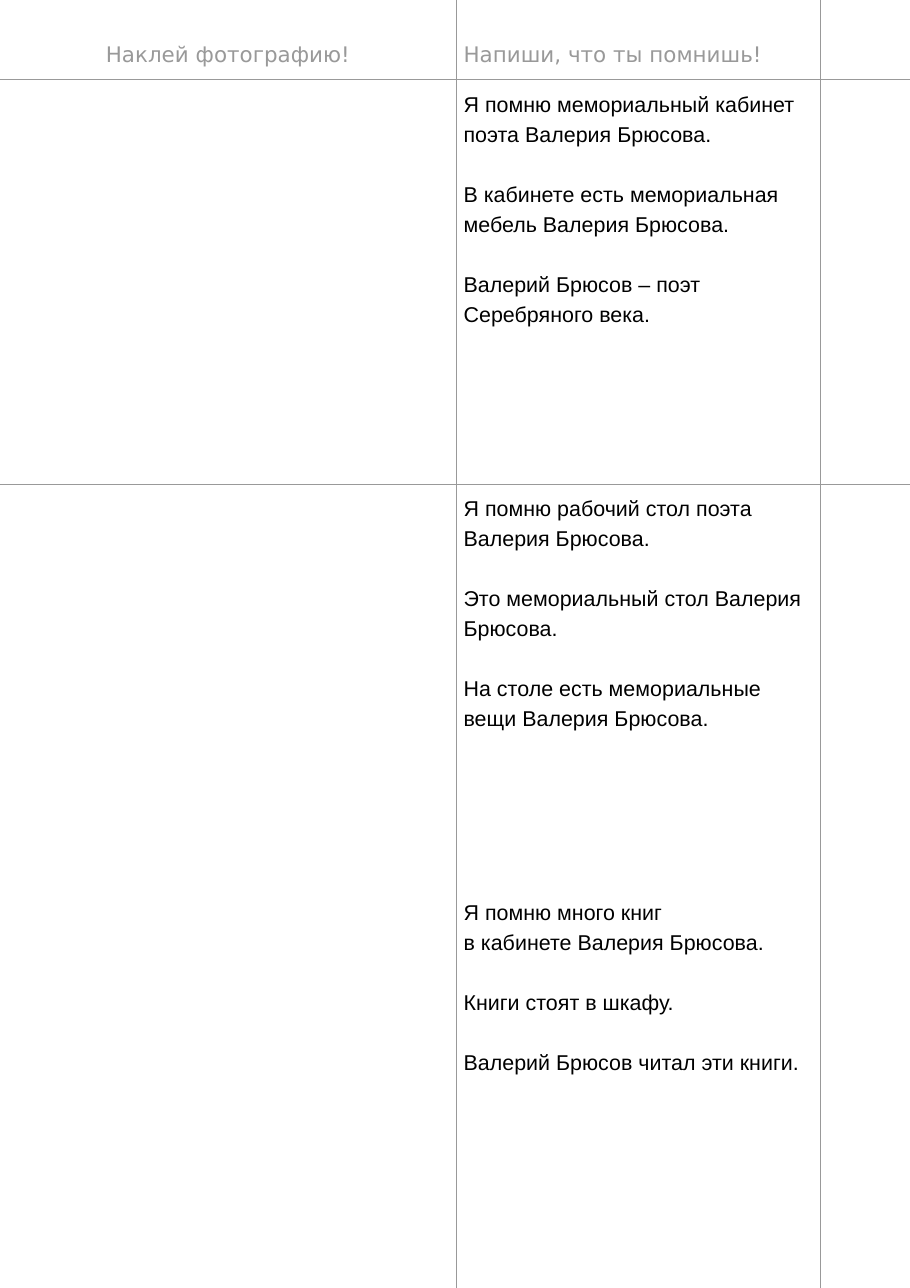
"""Build the memory sheet: a table with room for photos and written memories."""
from dataclasses import dataclass

from lxml.etree import SubElement
from pptx import Presentation
from pptx.dml.color import RGBColor as Rgb
from pptx.enum.text import PP_ALIGN as Align
from pptx.oxml.ns import qn
from pptx.table import _Cell as Cell
from pptx.util import Pt

GREY, WHITE, BLACK = "999999", "FFFFFF", "000000"
LINE = 19.6
INSET = 5
WIDTHS = [298, 238.3, 59]


@dataclass
class Row:
    height: float
    photo: str
    memory: list[str]
    ruled: bool
    head: bool = False


ROWS = [
    Row(51.8, "Наклей фотографию!", ["Напиши, что ты помнишь!"], True, head=True),
    Row(264.5, "", [
        "Я помню мемориальный кабинет поэта Валерия Брюсова.",
        "В кабинете есть мемориальная мебель Валерия Брюсова.",
        "Валерий Брюсов – поэт Серебряного века.",
    ], True),
    Row(263.5, "", [
        "Я помню рабочий стол поэта Валерия Брюсова.",
        "Это мемориальный стол Валерия Брюсова.",
        "На столе есть мемориальные вещи Валерия Брюсова.",
    ], False),
    Row(263.5, "", [
        "Я помню много книг\vв кабинете Валерия Брюсова.",
        "Книги стоят в шкафу.",
        "Валерий Брюсов читал эти книги.",
    ], False),
]


def color(code: str) -> Rgb:
    return Rgb.from_string(code)


def write(cell: Cell, lines: list[str], *, font: str, tint: str,
          align: Align = Align.LEFT, size: float = 14) -> None:
    frame = cell.text_frame
    for i, line in enumerate(lines):
        para = frame.add_paragraph() if i else frame.paragraphs[0]
        para.text = line
        para.alignment = align
        para.line_spacing = Pt(LINE)
        para.space_before = Pt(LINE if i else 0)
        for run in para.runs:
            run.font.name = font
            run.font.size = Pt(size)
            run.font.color.rgb = color(tint)


def border(cell: Cell, sides: dict[str, bool]) -> None:
    props = cell._tc.get_or_add_tcPr()
    for side, shown in sides.items():
        line = SubElement(props, qn(f"a:ln{side}"), w=str(Pt(0.53) if shown else 0))
        if shown:
            fill = SubElement(line, qn("a:solidFill"))
            SubElement(fill, qn("a:srgbClr"), val=GREY)
        else:
            SubElement(line, qn("a:noFill"))


def main() -> None:
    deck = Presentation()
    deck.slide_width, deck.slide_height = Pt(594.72), Pt(841.68)
    slide = deck.slides.add_slide(deck.slide_layouts[6])
    high = sum(row.height for row in ROWS)
    table = slide.shapes.add_table(len(ROWS), len(WIDTHS), 0, 0,
                                   Pt(sum(WIDTHS)), Pt(high)).table
    table.first_row = table.horz_banding = False
    for col, width in zip(table.columns, WIDTHS):
        col.width = Pt(width)

    for r, row in enumerate(ROWS):
        table.rows[r].height = Pt(row.height)
        for c in range(len(WIDTHS)):
            cell = table.cell(r, c)
            cell.margin_left = cell.margin_right = cell.margin_bottom = Pt(INSET)
            cell.margin_top = Pt(INSET + LINE if row.head else INSET)
            border(cell, {"L": c > 0, "R": c < len(WIDTHS) - 1,
                          "T": r > 0 and ROWS[r - 1].ruled, "B": row.ruled})
            cell.fill.solid()
            cell.fill.fore_color.rgb = color(WHITE)
        font, tint = ("DejaVu Sans", GREY) if row.head else ("Arial", BLACK)
        if row.photo:
            write(table.cell(r, 0), [row.photo], font=font, tint=tint,
                  align=Align.CENTER)
        write(table.cell(r, 1), row.memory, font=font, tint=tint)
    deck.save("out.pptx")


if __name__ == "__main__":
    main()
